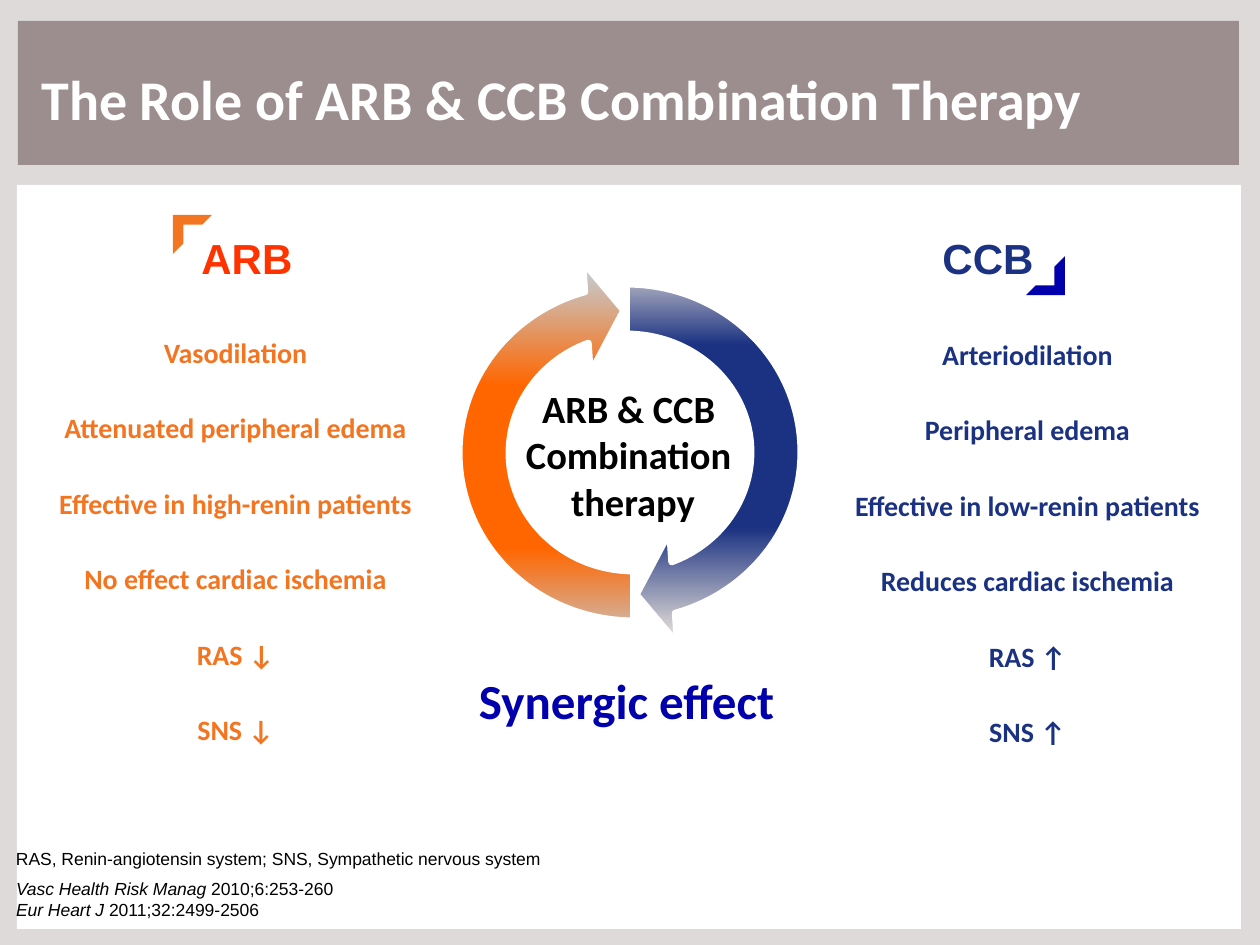
from lxml.etree import SubElement
from pptx import Presentation
from pptx.dml.color import RGBColor
from pptx.enum.shapes import MSO_SHAPE as Shape
from pptx.enum.text import MSO_AUTO_SIZE as AutoSize, PP_ALIGN as Align
from pptx.oxml.ns import qn
from pptx.util import Emu, Pt

EMU_PER_PX = 914400 / 126

COLORS = {
    "background": "DEDADA",
    "header": "9C8E8E",
    "white": "FFFFFF",
    "black": "000000",
    "orange": "F37521",
    "red": "FF3300",
    "navy": "1B3282",
    "blue": "0000AC",
    "vivid_orange": "FF6600",
    "silver": "C5C9CB",
    "cream": "EBE3DA",
}

ARB_EFFECTS = [
    "Vasodilation",
    "Attenuated peripheral edema",
    "Effective in high-renin patients",
    "No effect cardiac ischemia",
    "RAS ↓",
    "SNS ↓",
]
CCB_EFFECTS = [
    "Arteriodilation",
    "Peripheral edema",
    "Effective in low-renin patients",
    "Reduces cardiac ischemia",
    "RAS ↑",
    "SNS ↑",
]
CITATIONS = [
    ("Vasc Health Risk Manag", " 2010;6:253-260"),
    ("Eur Heart J ", "2011;32:2499-2506"),
]


def px(value):
    return Emu(round(value * EMU_PER_PX))


def rgb(name):
    return RGBColor.from_string(COLORS[name])


def add_shape(slide, kind, box, fill=None, rotation=0, adjustments=()):
    shape = slide.shapes.add_shape(kind, *map(px, box))
    shape.shadow.inherit = False
    shape.rotation = rotation
    for index, value in enumerate(adjustments):
        shape.adjustments[index] = value
    shape.line.fill.background()
    if fill:
        shape.fill.solid()
        shape.fill.fore_color.rgb = rgb(fill)
    return shape


def add_corner(slide, box, color, rotation=0):
    add_shape(slide, Shape.HALF_FRAME, box, color, rotation, (0.25, 0.27))


def add_cycle_arrow(slide, box, rotation, stops):
    """Half-circle arrow with a gradient of (percent, colour) stops."""
    arrow = add_shape(slide, Shape.CIRCULAR_ARROW, box, rotation=rotation,
                      adjustments=(0.125, 9.04, 204.58, 108, 0.14))
    arrow.line.color.rgb = rgb("white")
    arrow.line.width = Pt(3.75)
    arrow.fill.gradient()
    arrow.fill.gradient_angle = 0
    stop_list = arrow.element.spPr.find(qn("a:gradFill")).find(qn("a:gsLst"))
    for old_stop in list(stop_list):
        stop_list.remove(old_stop)
    for percent, color in stops:
        stop = SubElement(stop_list, qn("a:gs"), pos=str(percent * 1000))
        SubElement(stop, qn("a:srgbClr"), val=COLORS[color])


def style_runs(paragraph, size, color, font, bold):
    for run in paragraph.runs:
        run.font.size = Pt(size)
        run.font.name = font
        run.font.bold = bold
        run.font.color.rgb = rgb(color)


def add_text(slide, box, lines, size, color, font="Calibri", bold=True,
             align=Align.LEFT, gap=0, inset=True):
    """Text box with one paragraph a line; gap is the space above and below."""
    text_box = slide.shapes.add_textbox(*map(px, box))
    frame = text_box.text_frame
    frame.word_wrap = False
    frame.auto_size = AutoSize.SHAPE_TO_FIT_TEXT
    if not inset:
        frame.margin_left = frame.margin_right = 0
        frame.margin_top = frame.margin_bottom = 0
    for index, line in enumerate(lines):
        paragraph = frame.add_paragraph() if index else frame.paragraphs[0]
        paragraph.text = line
        paragraph.alignment = align
        if gap:
            paragraph.space_after = Pt(gap)
            if index:
                paragraph.space_before = Pt(gap)
        style_runs(paragraph, size, color, font, bold)
    return frame


def add_note(slide, box, lines):
    return add_text(slide, box, lines, 10, "black", "Arial", False, inset=False)


def add_citations(slide, box, citations):
    """Journal names in italics, each followed by its upright reference."""
    frame = add_note(slide, box, [journal for journal, _ in citations])
    for paragraph, (_, reference) in zip(frame.paragraphs, citations):
        paragraph.add_run().text = reference
        style_runs(paragraph, 10, "black", "Arial", False)
        paragraph.runs[0].font.italic = True


def add_effects(slide, box, effects, color):
    add_text(slide, box, effects, 16, color, align=Align.CENTER, gap=12)


def main():
    presentation = Presentation()
    presentation.slide_width = px(1260)
    presentation.slide_height = px(945)
    slide = presentation.slides.add_slide(presentation.slide_layouts[6])
    slide.background.fill.solid()
    slide.background.fill.fore_color.rgb = rgb("background")

    add_shape(slide, Shape.RECTANGLE, (18, 21, 1221, 144), "header")
    add_shape(slide, Shape.RECTANGLE, (17, 185, 1224, 744), "white")
    add_text(slide, (29, 58, 1106, 81),
             ["The Role of ARB & CCB Combination Therapy"], 32, "white")

    add_cycle_arrow(slide, (435, 248, 397, 410), 270, [
        (1, "silver"), (26, "vivid_orange"),
        (67, "vivid_orange"), (95, "silver")])
    add_cycle_arrow(slide, (428, 247, 397, 410), 90, [
        (0, "cream"), (23, "navy"), (69, "navy"), (97, "cream")])
    add_text(slide, (512, 379, 242, 152),
             ["ARB & CCB ", "Combination \vtherapy"], 22, "black",
             align=Align.CENTER)
    add_text(slide, (464, 664, 325, 72), ["Synergic effect"], 28, "blue",
             align=Align.CENTER)

    add_effects(slide, (44, 329, 383, 428), ARB_EFFECTS, "orange")
    add_effects(slide, (840, 331, 375, 428), CCB_EFFECTS, "navy")
    add_text(slide, (189, 226, 117, 63), ["ARB"], 24, "red", "Arial")
    add_text(slide, (930, 226, 117, 63), ["CCB"], 24, "navy", "Arial")
    add_corner(slide, (173, 215, 39, 39), "orange")
    add_corner(slide, (1026, 256, 39, 39), "blue", 180)

    add_note(slide, (16, 848, 530, 21),
             ["RAS, Renin-angiotensin system; SNS, Sympathetic nervous system"])
    add_citations(slide, (16, 878, 321, 43), CITATIONS)

    presentation.save("out.pptx")


if __name__ == "__main__":
    main()
